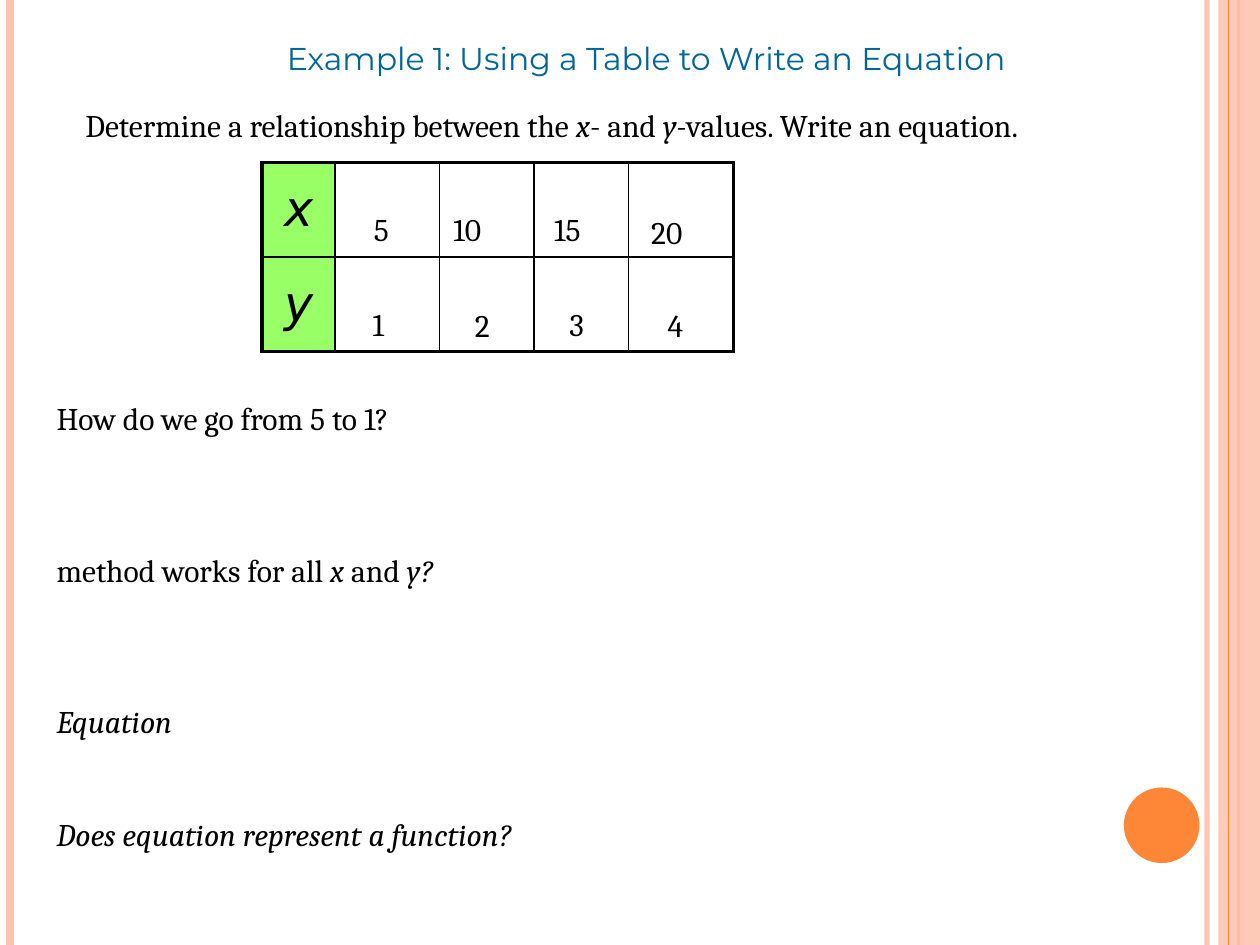
from lxml import etree
from pptx import Presentation
from pptx.dml.color import RGBColor
from pptx.enum import shapes, text
from pptx.oxml import ns
from pptx.util import Inches, Pt

PEACH = RGBColor(0xFE, 0xC3, 0xAE)
ORANGE = RGBColor(0xFE, 0x86, 0x37)
BLUE = RGBColor(0x00, 0x66, 0x99)
GREEN = RGBColor(0x99, 0xFF, 0x66)
BLACK = RGBColor(0, 0, 0)
WHITE = RGBColor(0xFF, 0xFF, 0xFF)

OUTER, INNER = Pt(2.25), Pt(1)


def set_opacity(properties, percent):
    color = properties.find(".//" + ns.qn("a:srgbClr"))
    etree.SubElement(color, ns.qn("a:alpha"), val=str(percent * 1000))


def add_run(paragraph, words, size=18, font="Cambria", color=BLACK, italic=False):
    run = paragraph.add_run()
    run.text = words
    run.font.size = Pt(size)
    run.font.name = font
    run.font.color.rgb = color
    run.font.italic = italic


def add_runs(paragraph, runs):
    """Add (words, italic) pairs."""
    for words, italic in runs:
        add_run(paragraph, words, italic=italic)


def add_text_box(slide, left, top, width, height, wrap=True):
    box = slide.shapes.add_textbox(left, top, width, height)
    box.text_frame.word_wrap = wrap
    box.text_frame.auto_size = text.MSO_AUTO_SIZE.SHAPE_TO_FIT_TEXT
    return box.text_frame


def add_stripe(slide, x, height, color, weight, opacity=100):
    line = slide.shapes.add_connector(shapes.MSO_CONNECTOR.STRAIGHT, x, 0, x, height)
    line.line.color.rgb = color
    line.line.width = Pt(weight)
    if opacity < 100:
        set_opacity(line._element.spPr, opacity)
    etree.SubElement(line._element.spPr, ns.qn("a:effectLst"))


def add_solid(slide, kind, left, top, width, height, color):
    shape = slide.shapes.add_shape(kind, left, top, width, height)
    shape.shadow.inherit = False
    shape.fill.solid()
    shape.fill.fore_color.rgb = color
    shape.line.fill.background()
    return shape


def add_decoration(slide, width, height):
    add_stripe(slide, width - Inches(0.42), height, PEACH, 3, 93)
    add_stripe(slide, Inches(0.08), height, PEACH, 4.5)
    add_stripe(slide, width - Inches(0.17), height, ORANGE, 1.5)
    band = add_solid(slide, shapes.MSO_SHAPE.RECTANGLE,
                     width - Inches(0.33), 0, Inches(0.33), height, PEACH)
    set_opacity(band._element.spPr, 87)
    add_stripe(slide, width - Inches(0.25), height, ORANGE, 0.75)
    add_solid(slide, shapes.MSO_SHAPE.OVAL, width - Inches(1.08),
              height - Inches(1.25), Inches(0.6), Inches(0.6), ORANGE)


def set_title(slide, left, top, width, height):
    title = slide.shapes.title
    title.left, title.top, title.width, title.height = left, top, width, height
    frame = title.text_frame
    frame.auto_size = text.MSO_AUTO_SIZE.NONE
    frame.vertical_anchor = text.MSO_ANCHOR.MIDDLE
    frame.margin_left = Inches(0.36)
    paragraph = frame.paragraphs[0]
    paragraph.alignment = text.PP_ALIGN.CENTER
    add_run(paragraph, "Example 1: Using a Table to Write an Equation",
            font="Montserrat", color=BLUE)


def add_task(slide, left, top, width, height):
    frame = add_text_box(slide, left, top, width, height)
    add_runs(frame.paragraphs[0], [
        ("Determine a relationship between the ", False), ("x", True),
        ("- and ", False), ("y-", True),
        ("values. Write an equation.", False)])


def set_borders(cell, widths):
    """Give the left, right, top and bottom borders their widths."""
    properties = cell._tc.get_or_add_tcPr()
    for index, (side, width) in enumerate(zip("LRTB", widths)):
        line = etree.Element(ns.qn("a:ln" + side), w=str(width))
        fill = etree.SubElement(line, ns.qn("a:solidFill"))
        etree.SubElement(fill, ns.qn("a:srgbClr"), val=str(BLACK))
        properties.insert(index, line)


def add_value_table(slide, left, top, width, height):
    table = slide.shapes.add_table(2, 5, left, top, width, height).table
    for column, share in zip(table.columns, (0.58, 0.83, 0.75, 0.75, 0.83)):
        column.width = Inches(share)
    for row, name in enumerate("xy"):
        table.rows[row].height = height // 2
        for column in range(5):
            cell = table.cell(row, column)
            cell.fill.solid()
            cell.fill.fore_color.rgb = WHITE if column else GREEN
            set_borders(cell, [OUTER if edge else INNER for edge in
                               (column == 0, column == 4, row == 0, row == 1)])
        header = table.cell(row, 0)
        header.vertical_anchor = text.MSO_ANCHOR.MIDDLE
        paragraph = header.text_frame.paragraphs[0]
        paragraph.alignment = text.PP_ALIGN.CENTER
        paragraph.space_before = Pt(5.6)
        add_run(paragraph, name, 28, "DejaVu Sans", italic=True)


def add_values(slide, left, top):
    """Place the numbers over the table whose corner is given."""
    values = [("5", 0.79, 0.33), ("10", 1.42, 0.33), ("15", 2.22, 0.33),
              ("20", 2.99, 0.35), ("1", 0.78, 1.08), ("2", 1.59, 1.09),
              ("3", 2.34, 1.08), ("4", 3.12, 1.09)]
    for value, x, y in values:
        width = Inches(0.2 + 0.24 * len(value))
        frame = add_text_box(slide, left + Inches(x), top + Inches(y),
                             width, Inches(0.5), wrap=False)
        add_run(frame.paragraphs[0], value)


def add_questions(slide, left, top, width, height):
    frame = add_text_box(slide, left, top, width, height)
    questions = [
        (0, [("How do we go from 5 to 1?", False)]),
        (65, [("method works for all ", False), ("x ", True),
              ("and ", False), ("y?", True)]),
        (65, [("Equation", True)]),
        (43, [("Does equation represent a function?", True)])]
    for index, (gap, runs) in enumerate(questions):
        paragraph = frame.add_paragraph() if index else frame.paragraphs[0]
        paragraph.space_before = Pt(gap)
        add_runs(paragraph, runs)


def main():
    presentation = Presentation()
    presentation.slide_width = Inches(10)
    presentation.slide_height = Inches(7.5)
    slide = presentation.slides.add_slide(presentation.slide_layouts[5])
    add_decoration(slide, presentation.slide_width, presentation.slide_height)
    set_title(slide, 0, Inches(0.21), Inches(10), Inches(0.5))
    add_task(slide, Inches(0.58), Inches(0.79), Inches(8.93), Inches(0.9))
    table_left, table_top = Inches(2.08), Inches(1.29)
    add_value_table(slide, table_left, table_top, Inches(3.75), Inches(1.5))
    add_values(slide, table_left, table_top)
    add_questions(slide, Inches(0.35), Inches(3.12), Inches(4.72), Inches(3.74))
    presentation.save("out.pptx")


if __name__ == "__main__":
    main()
